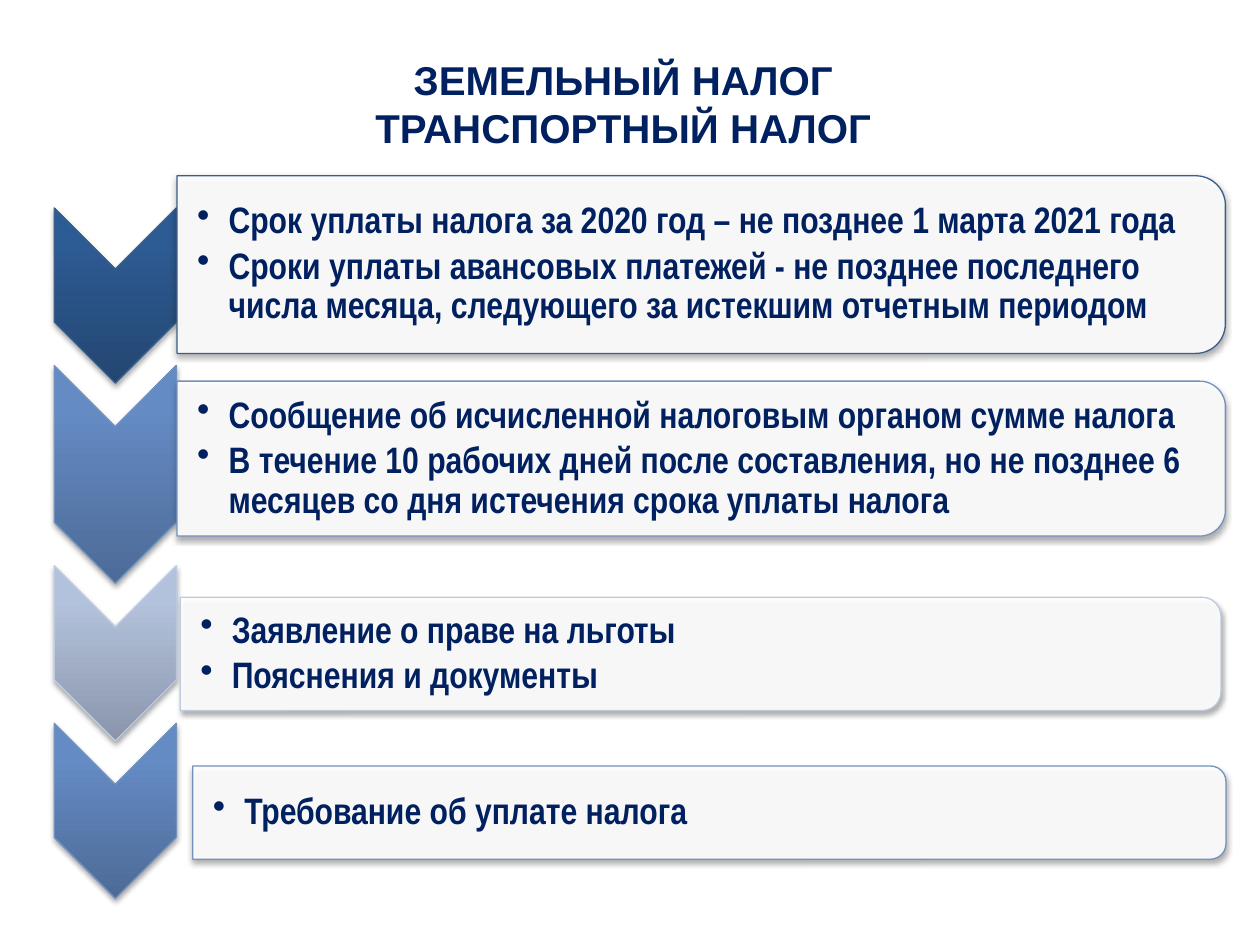
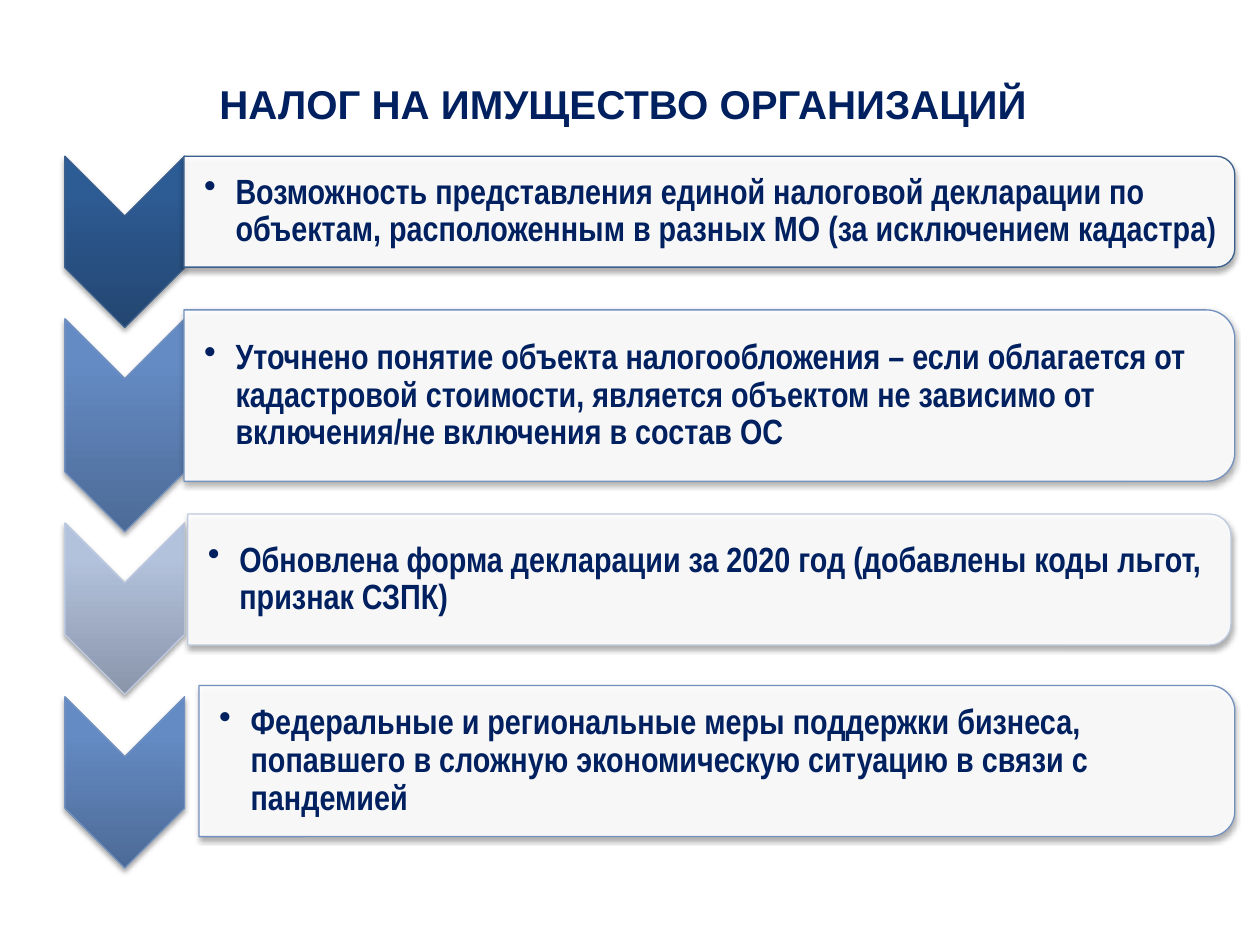
from dataclasses import dataclass

from lxml.etree import SubElement
from pptx import Presentation
from pptx.dml.color import RGBColor
from pptx.enum.shapes import MSO_SHAPE
from pptx.enum.text import MSO_ANCHOR, MSO_AUTO_SIZE, PP_ALIGN
from pptx.oxml.ns import qn
from pptx.util import Inches, Pt

SLIDE_WIDTH, SLIDE_HEIGHT = Inches(10), Inches(7.5)
COLUMN, ROW = SLIDE_WIDTH / 100, SLIDE_HEIGHT / 75
NAVY, WHITE, BLACK = "002060", "FFFFFF", "000000"
CORNER_INSET = 0.05
BULLET_INDENT = Inches(0.25)


@dataclass
class Box:
    left: float
    top: float
    width: float
    height: float

    def lengths(self):
        return (round(self.left * COLUMN), round(self.top * ROW),
                round(self.width * COLUMN), round(self.height * ROW))

    def turned(self):
        return Box(self.left + (self.width - self.height) / 2,
                   self.top + (self.height - self.width) / 2,
                   self.height, self.width)

    def inset(self, margin):
        return Box(self.left, self.top + margin,
                   self.width - margin, self.height - 2 * margin)


@dataclass
class Theme:
    line: str
    stops: tuple


@dataclass
class Step:
    chevron_top: float
    chevron_height: float
    panel: Box
    paragraphs: tuple
    small_ending: str = ""


DARK = Theme("3A5F8C", ((0, "234671"), (80, "2D5B93"), (100, "2B5C96")))
MEDIUM = Theme("7391BF", ((0, "4D6B97"), (80, "648BC4"), (100, "638BC7")))
PALE = Theme("BECADF", ((0, "8A95AA"), (80, "B3C2DC"), (100, "B4C3DE")))
STEP_THEMES = (DARK, MEDIUM, PALE, MEDIUM)

LAND_AND_TRANSPORT_STEPS = (
    Step(16.5, 13.9, Box(14.05, 13.95, 83.2, 14.1), (
        "Срок уплаты налога за 2020 год – не позднее 1 марта 2021 года",
        "Сроки уплаты авансовых платежей - не позднее последнего числа месяца, "
        "следующего за истекшим отчетным периодом")),
    Step(29, 17.3, Box(14.05, 30.25, 83.2, 12.3), (
        "Сообщение об исчисленной налоговым органом сумме налога",
        "В течение 10 рабочих дней после составления, но не позднее 6 месяцев "
        "со дня истечения срока уплаты налога")),
    Step(44.9, 13.9, Box(14.3, 47.4, 82.6, 9), (
        "Заявление о праве на льготы",
        "Пояснения и документы")),
    Step(57.4, 13.9, Box(15.3, 60.8, 82, 7.4), (
        "Требование об уплате налога",)),
)
PROPERTY_STEPS = (
    Step(12.4, 13.6, Box(14.6, 12.4, 83.4, 8.8), (
        "Возможность представления единой налоговой декларации по объектам, "
        "расположенным в разных МО (за исключением кадастра",), ")"),
    Step(25.3, 16.9, Box(14.6, 24.6, 83.4, 13.6), (
        "Уточнено понятие объекта налогообложения – если облагается от "
        "кадастровой стоимости, является объектом не зависимо от "
        "включения/не включения в состав ОС",)),
    Step(41.5, 13.6, Box(14.9, 40.8, 82.8, 10.4), (
        "Обновлена форма декларации за 2020 год (добавлены коды льгот, "
        "признак СЗПК)",)),
    Step(55.3, 13.6, Box(15.8, 54.4, 82.2, 12), (
        "Федеральные и региональные меры поддержки бизнеса, попавшего в "
        "сложную экономическую ситуацию в связи с пандемией",)),
)


def color(value):
    return RGBColor.from_string(value)


def style_font(font, name, size):
    font.name = name
    font.size = Pt(size)
    font.bold = True
    font.color.rgb = color(NAVY)


def add_color_element(parent, value, alpha=None):
    element = SubElement(parent, qn("a:srgbClr"), val=value)
    if alpha is not None:
        SubElement(element, qn("a:alpha"), val=str(alpha * 1000))


def add_shadow(shape):
    effects = SubElement(shape.element.spPr, qn("a:effectLst"))
    shadow = SubElement(effects, qn("a:outerShdw"), blurRad=str(Pt(3.1)),
                        dist=str(Pt(1.8)), dir="5400000", rotWithShape="0")
    add_color_element(shadow, BLACK, 35)


def fill_gradient(shape, stops):
    gradient = SubElement(shape.element.spPr, qn("a:gradFill"), rotWithShape="0")
    stop_list = SubElement(gradient, qn("a:gsLst"))
    for position, value in stops:
        stop = SubElement(stop_list, qn("a:gs"), pos=str(position * 1000))
        add_color_element(stop, value)
    SubElement(gradient, qn("a:lin"), ang="16200000", scaled="0")


def fill_translucent_white(shape):
    solid = SubElement(shape.element.spPr, qn("a:solidFill"))
    add_color_element(solid, WHITE, 90)


def add_turned_shape(slide, kind, box, line):
    shape = slide.shapes.add_shape(kind, *box.turned().lengths())
    shape.rotation = 90
    shape.line.color.rgb = color(line)
    shape.line.width = Pt(0.75)
    return shape


def order_fill_before_line(shape):
    properties = shape.element.spPr
    properties.append(properties.find(qn("a:ln")))


def add_chevron(slide, box, theme):
    chevron = add_turned_shape(slide, MSO_SHAPE.CHEVRON, box, theme.line)
    fill_gradient(chevron, theme.stops)
    order_fill_before_line(chevron)
    add_shadow(chevron)


def add_panel(slide, box, theme):
    panel = add_turned_shape(slide, MSO_SHAPE.ROUND_2_SAME_RECTANGLE, box, theme.line)
    fill_translucent_white(panel)
    order_fill_before_line(panel)
    add_shadow(panel)


def add_bullet(paragraph):
    properties = paragraph._p.get_or_add_pPr()
    properties.set("marL", str(BULLET_INDENT))
    properties.set("indent", str(-BULLET_INDENT))
    SubElement(properties, qn("a:buChar"), char="•")


def add_bullet_text(slide, box, step, size):
    text_box = slide.shapes.add_textbox(*box.inset(CORNER_INSET * box.height).lengths())
    frame = text_box.text_frame
    frame.word_wrap = True
    frame.vertical_anchor = MSO_ANCHOR.MIDDLE
    frame.margin_left = Inches(0.16)
    frame.margin_top = frame.margin_right = frame.margin_bottom = Inches(0.01)
    frame.text = "\n".join(step.paragraphs)
    for paragraph in frame.paragraphs:
        add_bullet(paragraph)
        paragraph.line_spacing = 0.9
        paragraph.space_after = Pt(3.2)
        style_font(paragraph.font, "Arial Narrow", size)
    if step.small_ending:
        ending = frame.paragraphs[-1].add_run()
        ending.text = step.small_ending
        ending.font.size = Pt(size - 1)


def add_title(slide, text, box):
    title = slide.shapes.title
    title.left, title.top, title.width, title.height = box.lengths()
    frame = title.text_frame
    frame.text = text
    frame.word_wrap = True
    frame.auto_size = MSO_AUTO_SIZE.NONE
    frame.vertical_anchor = MSO_ANCHOR.MIDDLE
    paragraph = frame.paragraphs[0]
    paragraph.alignment = PP_ALIGN.CENTER
    style_font(paragraph.font, "Arial", 23)


def add_steps_slide(presentation, title, steps, chevron_left, chevron_width, size):
    slide = presentation.slides.add_slide(presentation.slide_layouts[5])
    add_title(slide, title, Box(7.6, 3.9, 83.8, 8.6))
    for step, theme in zip(steps, STEP_THEMES):
        chevron = Box(chevron_left, step.chevron_top, chevron_width, step.chevron_height)
        add_chevron(slide, chevron, theme)
        add_panel(slide, step.panel, theme)
        add_bullet_text(slide, step.panel, step, size)


def main():
    presentation = Presentation()
    presentation.slide_width, presentation.slide_height = SLIDE_WIDTH, SLIDE_HEIGHT
    add_steps_slide(presentation, "ЗЕМЕЛЬНЫЙ НАЛОГ\vТРАНСПОРТНЫЙ НАЛОГ",
                    LAND_AND_TRANSPORT_STEPS, 4.3, 9.7, 21)
    add_steps_slide(presentation, "НАЛОГ НА ИМУЩЕСТВО ОРГАНИЗАЦИЙ",
                    PROPERTY_STEPS, 5.15, 9.5, 20)
    presentation.save("out.pptx")


if __name__ == "__main__":
    main()
